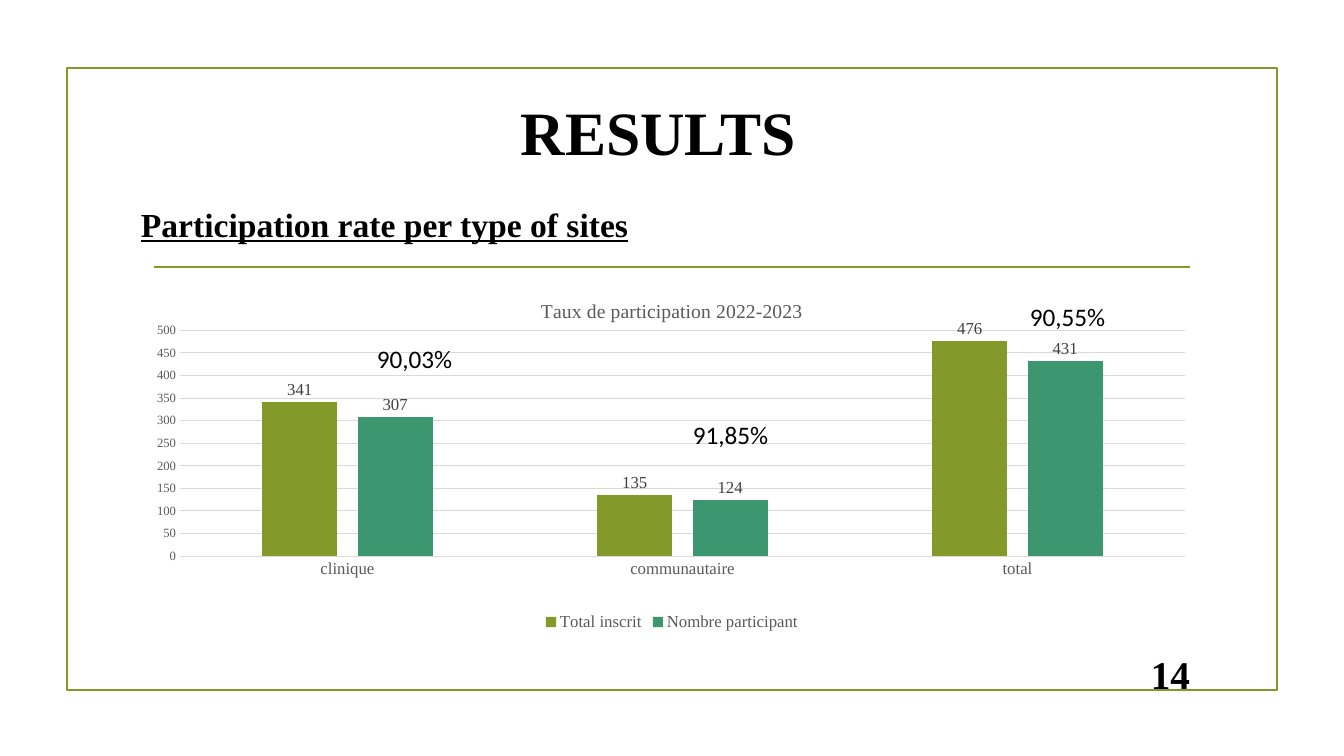
"""Build the slide of participation rates per type of site."""
from lxml import etree
from pptx import Presentation
from pptx.chart.data import CategoryChartData
from pptx.dml.color import RGBColor
from pptx.enum import chart as kinds, shapes, text
from pptx.oxml.ns import qn
from pptx.util import Pt

PX = 914400 / 100.8
BLACK = RGBColor(0x00, 0x00, 0x00)
OLIVE = RGBColor(0x83, 0x99, 0x2A)
GREEN = RGBColor(0x3C, 0x97, 0x70)
DARK = RGBColor(0x40, 0x40, 0x40)
GREY = RGBColor(0x59, 0x59, 0x59)
PALE = RGBColor(0xD9, 0xD9, 0xD9)
SERIF = "Times New Roman"

TITLE = "RESULTS "
SUBTITLE = "Participation rate per type of sites"
NUMBER = "14"
CHART_TITLE = "Taux de participation 2022-2023"
SITES = ["clinique", "communautaire", "total"]
SERIES = [
    ("Total inscrit", [341, 135, 476], OLIVE),
    ("Nombre participant", [307, 124, 431], GREEN),
]
RATES = [("90,03%", 367, 338), ("91,85%", 683, 414), ("90,55%", 1020, 296)]
PLOT = {"x": 0.035, "y": 0.137, "w": 0.95, "h": 0.64}


def px(*lengths):
    return [round(length * PX) for length in lengths]


def style(font, size, color=BLACK, name=SERIF, bold=False):
    font.size, font.name, font.bold = Pt(size), name, bold
    font.color.rgb = color


def write(box, words, size, align, anchor, name=SERIF, bold=True, wrap=True):
    frame = box.text_frame
    frame.text = words
    frame.word_wrap = wrap
    frame.auto_size = text.MSO_AUTO_SIZE.NONE
    frame.vertical_anchor = anchor
    para = frame.paragraphs[0]
    para.alignment = align
    style(para.font, size, name=name, bold=bold)
    return para


def add_frame(page):
    border = page.shapes.add_shape(shapes.MSO_SHAPE.RECTANGLE, *px(67, 68, 1210, 622))
    border.shadow.inherit = False
    border.fill.background()
    rule = page.shapes.add_connector(
        shapes.MSO_CONNECTOR.STRAIGHT, *px(154, 267, 1190, 267))
    etree.SubElement(rule._element.spPr, qn("a:effectLst"))
    for outline in (border.line, rule.line):
        outline.color.rgb = OLIVE
        outline.width = Pt(1.25)


def place_plot(chart):
    area = chart._chartSpace.chart.plotArea
    for old in area.findall(qn("c:layout")):
        area.remove(old)
    layout = etree.Element(qn("c:layout"))
    manual = etree.SubElement(layout, qn("c:manualLayout"))
    settings = {"layoutTarget": "inner", "xMode": "edge", "yMode": "edge", **PLOT}
    for key, value in settings.items():
        etree.SubElement(manual, qn("c:" + key)).set("val", str(value))
    area.insert(0, layout)


def add_participation_chart(page):
    data = CategoryChartData()
    data.categories = SITES
    for name, values, _ in SERIES:
        data.add_series(name, values)
    chart = page.shapes.add_chart(
        kinds.XL_CHART_TYPE.COLUMN_CLUSTERED, *px(143, 282, 1058, 353), data).chart
    style(chart.font, 10)
    chart.has_title = True
    chart.chart_title.include_in_layout = False
    heading = chart.chart_title.text_frame
    heading.text = CHART_TITLE
    style(heading.paragraphs[0].font, 14, GREY)

    chart.has_legend = True
    chart.legend.position = kinds.XL_LEGEND_POSITION.BOTTOM
    chart.legend.include_in_layout = False
    style(chart.legend.font, 12, GREY)

    for axis, size in ((chart.category_axis, 12), (chart.value_axis, 9)):
        axis.major_tick_mark = axis.minor_tick_mark = kinds.XL_TICK_MARK.NONE
        style(axis.tick_labels.font, size, GREY)
    scale = chart.value_axis
    scale.minimum_scale, scale.maximum_scale, scale.major_unit = 0, 500, 50
    scale.format.line.fill.background()
    for line in (chart.category_axis.format.line, scale.major_gridlines.format.line):
        line.color.rgb = PALE
        line.width = Pt(0.75)

    plot = chart.plots[0]
    plot.gap_width, plot.overlap, plot.vary_by_categories = 219, -27, False
    for bars, (_, _, color) in zip(plot.series, SERIES):
        bars.format.fill.solid()
        bars.format.fill.fore_color.rgb = color
        labels = bars.data_labels
        labels.show_value = True
        labels.position = kinds.XL_LABEL_POSITION.OUTSIDE_END
        style(labels.font, 12, DARK)
    place_plot(chart)


def main():
    deck = Presentation()
    deck.slide_width, deck.slide_height = px(1344, 756)
    page = deck.slides.add_slide(deck.slide_layouts[5])
    align, anchor = text.PP_ALIGN, text.MSO_ANCHOR
    add_frame(page)

    title = page.shapes.title
    title.left, title.top, title.width, title.height = px(114, 84, 1104, 93)
    write(title, TITLE, 44, align.CENTER, anchor.MIDDLE)
    number = page.shapes.add_textbox(*px(1141, 658, 59, 31))
    write(number, NUMBER, 28, align.RIGHT, anchor.MIDDLE)
    subtitle = page.shapes.add_textbox(*px(131, 199, 575, 52))
    write(subtitle, SUBTITLE, 24, align.LEFT, anchor.TOP).font.underline = True

    add_participation_chart(page)
    for rate, left, top in RATES:
        box = page.shapes.add_textbox(*px(left, top, 103, 40))
        write(box, rate, 18, align.LEFT, anchor.TOP, "Calibri", False, False)
        box.text_frame.auto_size = text.MSO_AUTO_SIZE.SHAPE_TO_FIT_TEXT
    deck.save("out.pptx")


if __name__ == "__main__":
    main()
